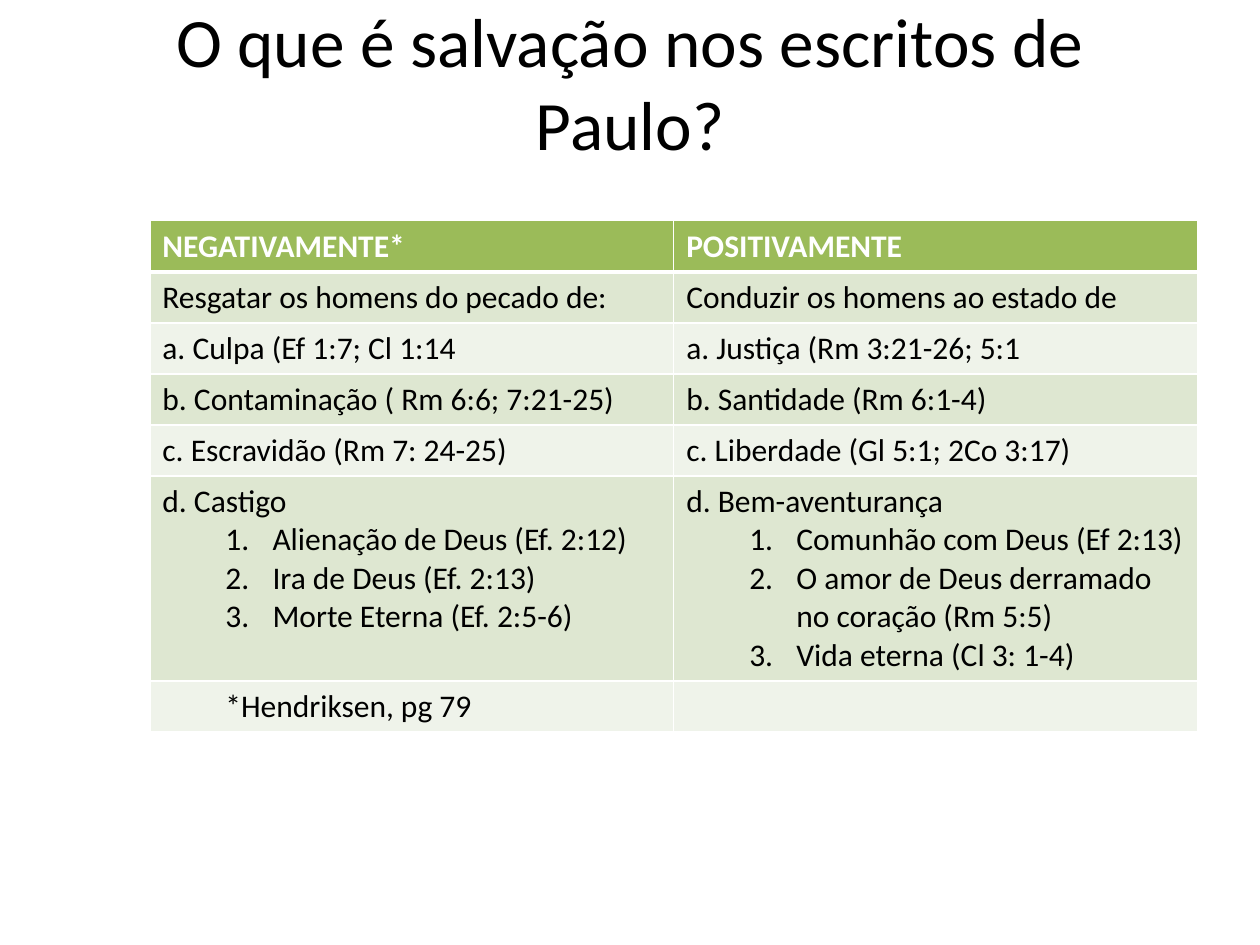
from dataclasses import dataclass

from lxml import etree
from pptx import Presentation
from pptx.dml.color import RGBColor
from pptx.enum import text as t
from pptx.oxml import ns
from pptx.util import Cm, Pt

FONT = "Calibri"
GREEN, BAND_DARK, BAND_LIGHT = "9BBB59", "DEE7D1", "EFF3EA"
WHITE, BLACK = "FFFFFF", "000000"
ROW_H, TALL_ROW_H = Cm(1.03), Cm(4.11)


@dataclass
class Line:
    text: str
    indented: bool = False
    numbered: bool = False


def rgb(value: str) -> RGBColor:
    return RGBColor.from_string(value)


def numbered(*texts: str) -> list[Line]:
    return [Line(text, indented=True, numbered=True) for text in texts]


ROWS: list[tuple[list[Line], list[Line]]] = [
    ([Line("NEGATIVAMENTE*")], [Line("POSITIVAMENTE")]),
    ([Line("Resgatar os homens do pecado de:")],
     [Line("Conduzir os homens ao estado de")]),
    ([Line("a. Culpa (Ef 1:7; Cl 1:14")], [Line("a. Justiça (Rm 3:21-26; 5:1")]),
    ([Line("b. Contaminação ( Rm 6:6; 7:21-25)")], [Line("b. Santidade (Rm 6:1-4)")]),
    ([Line("c. Escravidão (Rm 7: 24-25)")], [Line("c. Liberdade (Gl 5:1; 2Co 3:17)")]),
    ([Line("d. Castigo"),
      *numbered("Alienação de Deus (Ef. 2:12)", "Ira de Deus (Ef. 2:13)",
                "Morte Eterna (Ef. 2:5-6)")],
     [Line("d. Bem-aventurança"),
      *numbered("Comunhão com Deus (Ef 2:13)",
                "O amor de Deus derramado no coração (Rm 5:5)",
                "Vida eterna (Cl 3: 1-4)")]),
    ([Line("*Hendriksen, pg 79", indented=True)], []),
]


def add_borders(cell, top: float, bottom: float) -> None:
    """Draw white cell borders, with widths in points."""
    tc_pr = cell._tc.get_or_add_tcPr()
    for side, width in (("L", 1), ("R", 1), ("T", top), ("B", bottom)):
        ln = etree.SubElement(tc_pr, ns.qn(f"a:ln{side}"), w=str(Pt(width)))
        fill = etree.SubElement(ln, ns.qn("a:solidFill"))
        etree.SubElement(fill, ns.qn("a:srgbClr"), val=WHITE)


def write_lines(tf, lines: list[Line], color: str, bold: bool) -> None:
    for i, line in enumerate(lines):
        p = tf.paragraphs[0] if i == 0 else tf.add_paragraph()
        p.text = line.text
        if line.indented:
            p.level = 1
            p_pr = p._p.get_or_add_pPr()
            p_pr.set("marL", str(Cm(2.22)))
            p_pr.set("indent", str(Cm(-0.95)))
            if line.numbered:
                etree.SubElement(p_pr, ns.qn("a:buFont"), typeface="+mj-lt")
                etree.SubElement(p_pr, ns.qn("a:buAutoNum"), type="arabicPeriod")
        for r in p.runs:
            r.font.name, r.font.size, r.font.bold = FONT, Pt(18), bold
            r.font.color.rgb = rgb(color)


def add_title(s, text: str) -> None:
    sp = s.shapes.title
    sp.left, sp.top, sp.width, sp.height = Cm(1.27), Cm(0.3), Cm(22.86), Cm(2.67)
    tf = sp.text_frame
    tf.text = text
    tf.word_wrap = True
    tf.auto_size = t.MSO_AUTO_SIZE.NONE
    tf.vertical_anchor = t.MSO_ANCHOR.MIDDLE
    p = tf.paragraphs[0]
    p.alignment = t.PP_ALIGN.CENTER
    font = p.runs[0].font
    font.name, font.size = FONT, Pt(39.6)
    font.color.rgb = rgb(BLACK)


def add_comparison(s) -> None:
    heights = [TALL_ROW_H if len(left) > 1 else ROW_H for left, _ in ROWS]
    table = s.shapes.add_table(len(ROWS), 2, Cm(3.02), Cm(4.45),
                               Cm(21.12), sum(heights)).table
    for i, (row, height) in enumerate(zip(ROWS, heights)):
        table.rows[i].height = height
        header = i == 0
        band = GREEN if header else BAND_DARK if i % 2 else BAND_LIGHT
        for j, lines in enumerate(row):
            cell = table.cell(i, j)
            add_borders(cell, top=3 if i == 1 else 1, bottom=3 if header else 1)
            cell.fill.solid()
            cell.fill.fore_color.rgb = rgb(band)
            write_lines(cell.text_frame, lines, WHITE if header else BLACK, header)


def main() -> None:
    prs = Presentation()
    prs.slide_width, prs.slide_height = Cm(25.4), Cm(19.05)
    s = prs.slides.add_slide(prs.slide_layouts[5])
    add_title(s, "O que é salvação nos escritos de Paulo?")
    add_comparison(s)
    prs.save("out.pptx")


if __name__ == "__main__":
    main()
